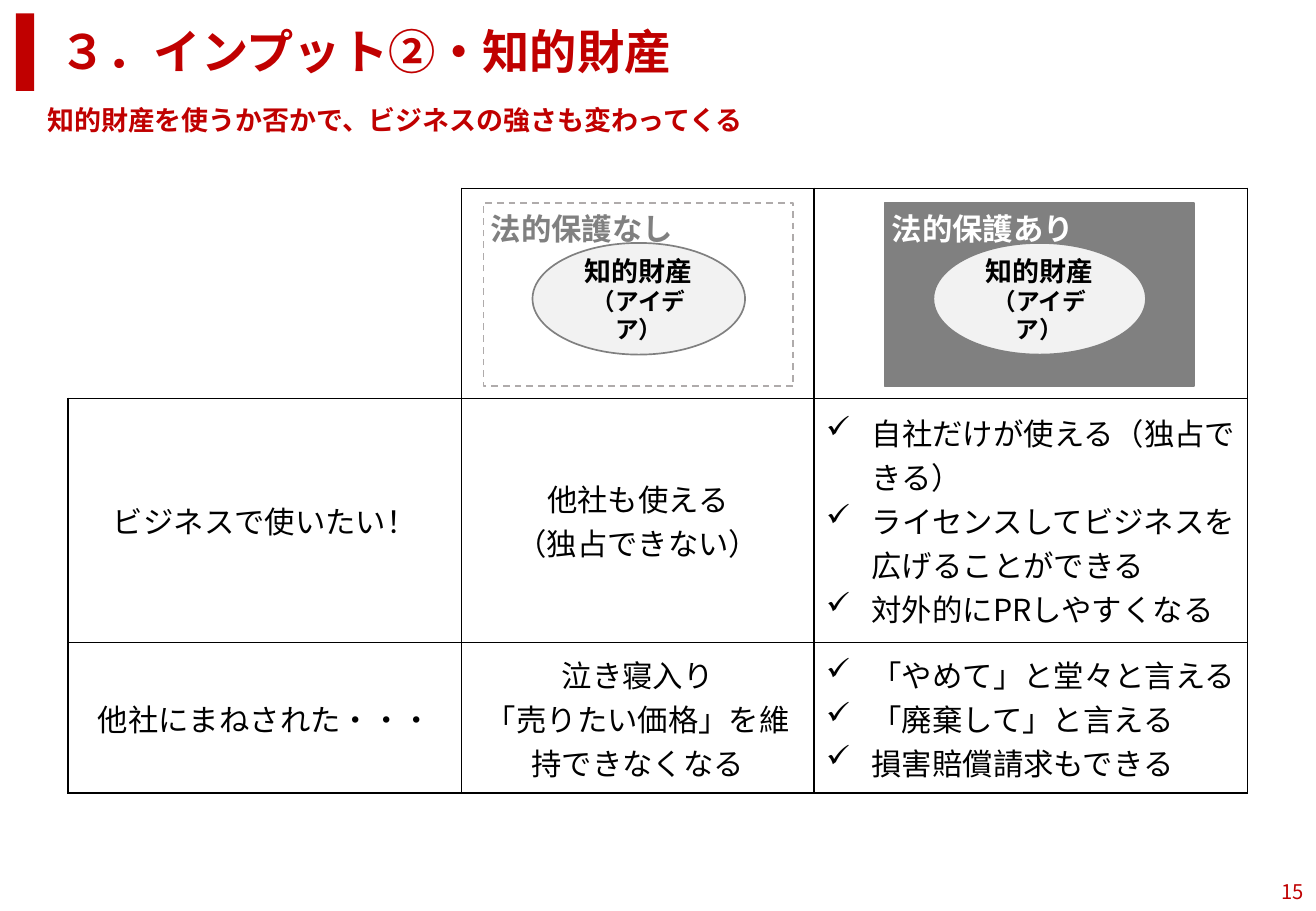
from dataclasses import dataclass
from itertools import accumulate

from lxml import etree
from pptx import Presentation
from pptx.dml.color import RGBColor
from pptx.enum.dml import MSO_LINE
from pptx.enum.shapes import MSO_SHAPE
from pptx.enum.text import MSO_ANCHOR, MSO_AUTO_SIZE, PP_ALIGN
from pptx.oxml.ns import qn
from pptx.util import Pt

RECT, OVAL = MSO_SHAPE.RECTANGLE, MSO_SHAPE.OVAL
TOP, MIDDLE = MSO_ANCHOR.TOP, MSO_ANCHOR.MIDDLE
LEFT, CENTER, RIGHT, JUSTIFY = (PP_ALIGN.LEFT, PP_ALIGN.CENTER,
                                PP_ALIGN.RIGHT, PP_ALIGN.JUSTIFY)
DASH, NO_AUTOFIT = MSO_LINE.DASH, MSO_AUTO_SIZE.NONE
TITLE_ONLY = 5


@dataclass(frozen=True)
class Theme:
    font: str = "Noto Sans CJK JP"
    red: str = "C00000"
    black: str = "000000"
    white: str = "FFFFFF"
    grey: str = "808080"
    dash_grey: str = "AFABAB"
    pale: str = "F2F2F2"
    title: int = 28
    body: int = 18
    lead: int = 16
    note: int = 14
    number: int = 12


T = Theme()
SLIDE_W, SLIDE_H = 780, 540
COLS = (233.3, 208.8, 257)
ROWS = (124.6, 144.7, 89.3)
CELLS = (
    (("ビジネスで使いたい！",),
     ("他社も使える", "（独占できない）"),
     ("自社だけが使える（独占できる）",
      "ライセンスしてビジネスを広げることができる",
      "対外的にPRしやすくなる")),
    (("他社にまねされた・・・",),
     ("泣き寝入り", "「売りたい価格」を維持できなくなる"),
     ("「やめて」と堂々と言える", "「廃棄して」と言える", "損害賠償請求もできる")),
)


def rgb(color):
    return RGBColor.from_string(color)


def place(sp, x, y, w, h):
    sp.left, sp.top, sp.width, sp.height = Pt(x), Pt(y), Pt(w), Pt(h)


def write(tf, lines, color, bold=False, align=LEFT):
    """Write (text, size) lines, one paragraph each."""
    for i, (text, size) in enumerate(lines):
        p = tf.paragraphs[0] if i == 0 else tf.add_paragraph()
        p.alignment = align
        r = p.add_run()
        r.text = text
        r.font.size, r.font.bold = Pt(size), bold
        r.font.color.rgb = rgb(color)
        r.font.name = T.font
        ea = etree.SubElement(r.font._element, qn("a:ea"))
        ea.set("typeface", T.font)


def set_frame(tf, anchor=TOP, inset=None):
    tf.word_wrap, tf.auto_size, tf.vertical_anchor = True, NO_AUTOFIT, anchor
    if inset is not None:
        tf.margin_left = tf.margin_right = Pt(inset)
        tf.margin_top = tf.margin_bottom = Pt(inset)


def add_block(slide, kind, box, fill=None, line=None):
    sp = slide.shapes.add_shape(kind, *map(Pt, box))
    sp.shadow.inherit = False
    if fill:
        sp.fill.solid()
        sp.fill.fore_color.rgb = rgb(fill)
    else:
        sp.fill.background()
    if line:
        sp.line.color.rgb = rgb(line)
        sp.line.width = Pt(1)
    else:
        sp.line.fill.background()
    return sp


def add_text(slide, box, lines, align=LEFT, bold=False, inset=None):
    tf = slide.shapes.add_textbox(*map(Pt, box)).text_frame
    set_frame(tf, inset=inset)
    write(tf, lines, T.red, bold, align)


def add_header(slide, x, y, w):
    # Red bar, title and lead sentence
    add_block(slide, RECT, (x, y, 10.8, 46), fill=T.red)
    title = slide.shapes.title
    place(title, x + 18.7, y + 1.5, w, 41)
    set_frame(title.text_frame)
    write(title.text_frame, [("３．インプット②・知的財産", T.title)], T.red, True)
    add_text(slide, (x + 18.7, y + 53.3, w, 41.8),
             [("知的財産を使うか否かで、ビジネスの強さも変わってくる", T.lead)],
             bold=True, inset=0)


def set_borders(cell, sides):
    tcPr = cell._tc.get_or_add_tcPr()
    for side in "LRTB":
        ln = etree.SubElement(tcPr, qn("a:ln" + side), w="12700")
        if side in sides:
            fill = etree.SubElement(ln, qn("a:solidFill"))
            etree.SubElement(fill, qn("a:srgbClr"), val=T.black)
        else:
            etree.SubElement(ln, qn("a:noFill"))
    cell.fill.background()


def add_checks(tf):
    for p in tf.paragraphs:
        pPr = p._p.get_or_add_pPr()
        pPr.set("marL", str(Pt(27)))
        pPr.set("indent", str(-Pt(27)))
        etree.SubElement(pPr, qn("a:buChar"), char="✓")


def add_comparison(slide, x, y):
    # Table: business situations against legal protection
    table = slide.shapes.add_table(len(ROWS), len(COLS), Pt(x), Pt(y),
                                   Pt(sum(COLS)), Pt(sum(ROWS))).table
    table.first_row = table.horz_banding = False
    for col, width in zip(table.columns, COLS):
        col.width = Pt(width)
    for row, height in zip(table.rows, ROWS):
        row.height = Pt(height)
    for i in range(len(ROWS)):
        for j in range(len(COLS)):
            cell = table.cell(i, j)
            set_borders(cell, "RB" if i == j == 0 else "LRTB")
            if i == 0:
                continue
            cell.vertical_anchor = MIDDLE
            checked = j == len(COLS) - 1
            write(cell.text_frame, [(text, T.body) for text in CELLS[i - 1][j]],
                  T.black, align=JUSTIFY if checked else CENTER)
            if checked:
                add_checks(cell.text_frame)

    # Diagrams in the heading row
    edges = [x + offset for offset in accumulate(COLS)]
    add_protection(slide, edges[0] + 13, y + 8.6, "法的保護なし", False)
    add_protection(slide, edges[1] + 41.8, y + 8.6, "法的保護あり", True)


def add_protection(slide, x, y, label, protected):
    # Frame with its label
    frame = add_block(slide, RECT, (x, y, 183.6, 108.7),
                      T.grey if protected else None,
                      T.grey if protected else T.dash_grey)
    if not protected:
        frame.line.dash_style = DASH
    set_frame(frame.text_frame, inset=4.3)
    write(frame.text_frame, [(label, T.body)], T.white if protected else T.grey, True)

    # Intellectual property inside the frame
    idea = add_block(slide, OVAL, (x + 29, y + 23.8, 126, 66.2), T.pale, T.grey)
    set_frame(idea.text_frame, MIDDLE, 4.3)
    write(idea.text_frame, [("知的財産", T.lead), ("（アイデア）", T.note)],
          T.black, True, CENTER)


def main():
    prs = Presentation()
    prs.slide_width, prs.slide_height = Pt(SLIDE_W), Pt(SLIDE_H)
    slide = prs.slides.add_slide(prs.slide_layouts[TITLE_ONLY])
    add_header(slide, 9.4, 7.9, 725)
    add_comparison(slide, 40.3, 111.6)
    # Page number
    add_text(slide, (SLIDE_W - 35, 517.7, 35, 21.6), [("15", T.number)], RIGHT)
    prs.save("out.pptx")


if __name__ == "__main__":
    main()
